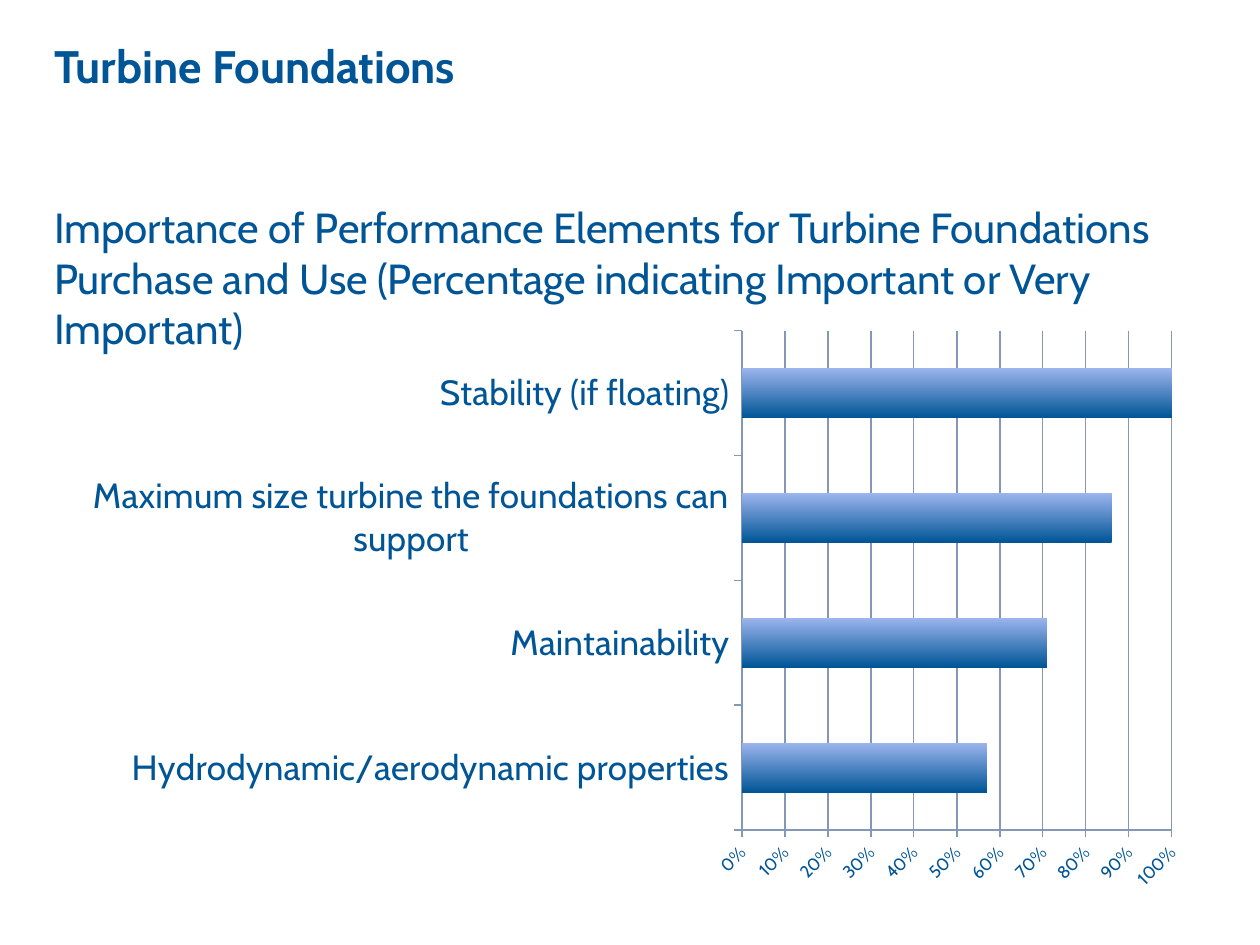
from lxml import etree
from pptx import Presentation
from pptx.chart.data import CategoryChartData
from pptx.dml.color import RGBColor
from pptx.enum import chart as ch, text
from pptx.oxml import parse_xml
from pptx.oxml.ns import nsdecls, qn
from pptx.util import Cm, Pt

BLUE, LIGHT, GRID = "005596", "9DB5EE", "8497B5"


def rgb(value):
    return RGBColor.from_string(value)


def write(tf, words, size, bold=False, color=BLUE, anchor=text.MSO_ANCHOR.TOP):
    tf.word_wrap = True
    tf.auto_size = text.MSO_AUTO_SIZE.NONE
    tf.vertical_anchor = anchor
    p = tf.paragraphs[0]
    p.alignment = text.PP_ALIGN.LEFT
    r = p.add_run()
    r.text = words
    r.font.name, r.font.size, r.font.bold = "Cabin", Pt(size), bold
    r.font.color.rgb = rgb(color)


prs = Presentation()
prs.slide_width, prs.slide_height = Cm(25.4), Cm(19.05)
s = prs.slides.add_slide(prs.slide_layouts[5])

# Title
sp = s.shapes.title
sp.left, sp.top, sp.width, sp.height = Cm(0.84), Cm(0.64), Cm(22.23), Cm(1.65)
write(sp.text_frame, "Turbine Foundations", 26, bold=True)

# Bar chart
data = CategoryChartData(number_format="0%")
data.categories = [
    "Hydrodynamic/aerodynamic properties",
    "Maintainability",
    "Maximum size turbine the foundations can support",
    "Stability (if floating)",
]
data.add_series("Series 1", [0.57, 0.71, 0.86, 1])
chart = s.shapes.add_chart(ch.XL_CHART_TYPE.BAR_CLUSTERED, Cm(1.5), Cm(6.43),
                           Cm(22.81), Cm(11.71), data).chart
chart.has_legend = False
chart.has_title = False
chart.font.name, chart.font.size = "Cabin", Pt(10)
chart.font.color.rgb = rgb(BLUE)

# Bars shaded from dark at the bottom to light at the top
plot = chart.plots[0]
plot.gap_width = 150
plot.vary_by_categories = False
fill = plot.series[0].format.fill
fill.gradient()
fill.gradient_angle = 90
for stop, color in zip(fill.gradient_stops, (BLUE, LIGHT)):
    stop.color.rgb = rgb(color)

# Axes
cat, val = chart.category_axis, chart.value_axis
for axis, size in ((cat, 20), (val, 10)):
    axis.major_tick_mark = ch.XL_TICK_MARK.OUTSIDE
    axis.format.line.color.rgb = rgb(GRID)
    axis.format.line.width = Pt(0.75)
    font = axis.tick_labels.font
    font.name, font.size = "Cabin", Pt(size)
    font.color.rgb = rgb(BLUE)
cat.has_major_gridlines = False
val.minimum_scale, val.maximum_scale, val.major_unit = 0, 1, 0.1
val.has_major_gridlines = True
val.major_gridlines.format.line.color.rgb = rgb(GRID)
val.major_gridlines.format.line.width = Pt(0.75)
val.tick_labels.number_format = "0%"
val.tick_labels.number_format_is_linked = False
val._element.find(qn("c:txPr")).find(qn("a:bodyPr")).set("rot", "-2700000")

# Fixed inner plot area, leaving room for the long labels
area = chart._chartSpace.chart.plotArea
for old in area.findall(qn("c:layout")):
    area.remove(old)
layout = parse_xml(f'<c:layout {nsdecls("c")}><c:manualLayout/></c:layout>')
for tag, value in (("layoutTarget", "inner"), ("xMode", "edge"), ("yMode", "edge"),
                   ("x", 0.59), ("y", 0.02), ("w", 0.38), ("h", 0.86)):
    etree.SubElement(layout[0], qn(f"c:{tag}")).set("val", str(value))
area.insert(0, layout)

# Chart heading
sp = s.shapes.add_textbox(Cm(0.84), Cm(3.94), Cm(23.44), Cm(3.33))
write(sp.text_frame, "Importance of Performance Elements for Turbine Foundations "
      "Purchase and Use (Percentage indicating Important or Very Important)", 24)

prs.save("out.pptx")
